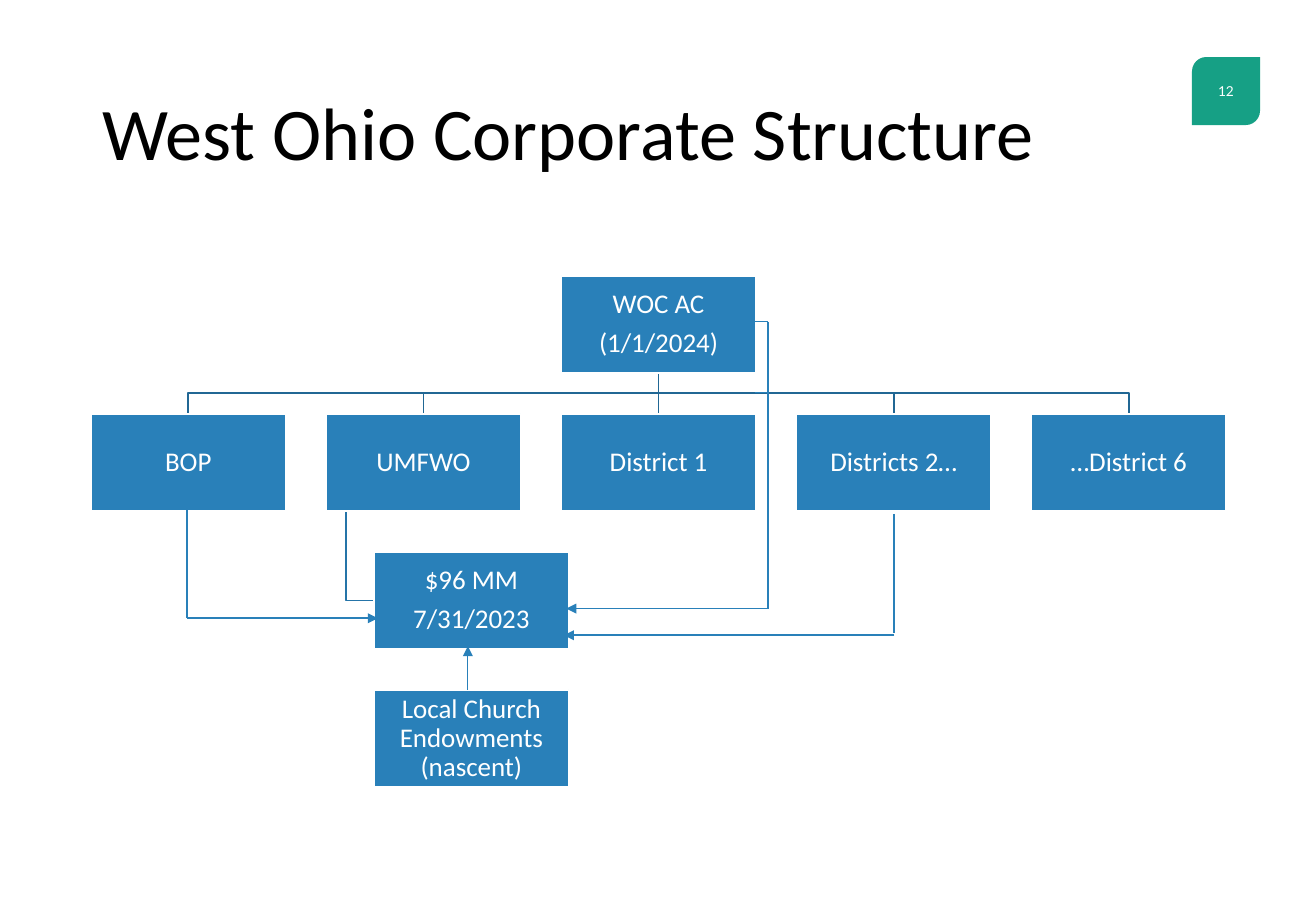
from pptx import Presentation
from pptx.dml.color import RGBColor
from pptx.enum.shapes import MSO_CONNECTOR, MSO_SHAPE
from pptx.enum.text import MSO_ANCHOR, MSO_AUTO_SIZE, PP_ALIGN
from pptx.oxml.ns import qn
from pptx.util import Inches, Pt
from lxml.etree import SubElement

# Content
TITLE = "West Ohio Corporate Structure"
PAGE = "12"
ROOT = ["WOC AC", "(1/1/2024)"]
UNITS = ["BOP", "UMFWO", "District 1", "Districts 2…", "…District 6"]
FUND = ["$96 MM", "7/31/2023"]
LOCAL = ["Local Church Endowments (nascent)"]

BLUE, TREE, BRANCH = "2980B9", "216794", "2574A8"
WHITE, GREEN, BLACK = "FFFFFF", "16A085", "000000"

# Grid: five columns, four rows
WIDE, HIGH = 1.6, 0.8
COLS = [0.75 + i * (8.49 - 0.75) / 4 for i in range(5)]
ROWS = [2.27 + i * (5.68 - 2.27) / 3 for i in range(4)]
FUND_X = 3.08
MID = COLS[2] + WIDE / 2

# Money flows: start, end, width, arrowhead
FLOWS = [
    ((6.21, 3.23), (6.33, 3.23), 0.5, False),
    ((6.32, 2.65), (6.32, 5.01), 1, False),
    ((6.32, 5.01), (4.66, 5.01), 1, True),
    ((1.54, 4.14), (1.54, 5.09), 1, False),
    ((1.54, 5.09), (3.11, 5.09), 1, True),
    ((7.36, 5.23), (4.64, 5.23), 1, True),
    ((7.36, 4.23), (7.36, 5.21), 1, False),
    ((6.21, 2.65), (6.32, 2.65), 0.5, False),
    ((3.85, 5.68), (3.85, 5.32), 0.5, True),
]


def color(code):
    return RGBColor.from_string(code)


def write(frame, lines, size, font, ink, align, space=0.9):
    frame.word_wrap = True
    frame.auto_size = MSO_AUTO_SIZE.NONE
    frame.vertical_anchor = MSO_ANCHOR.MIDDLE
    for i, line in enumerate(lines):
        para = frame.add_paragraph() if i else frame.paragraphs[0]
        para.alignment = align
        para.line_spacing = space
        para.space_before = Pt(5.6 if i else 0)
        run = para.add_run()
        run.text = line
        run.font.size = Pt(size)
        run.font.name = font
        run.font.color.rgb = color(ink)


def stroke(shape, code, width):
    shape.line.color.rgb = color(code)
    shape.line.width = Pt(width)


def add_box(x, y, lines):
    box = shapes.add_shape(MSO_SHAPE.RECTANGLE, Inches(x), Inches(y),
                           Inches(WIDE), Inches(HIGH))
    box.shadow.inherit = False
    box.fill.solid()
    box.fill.fore_color.rgb = color(BLUE)
    stroke(box, WHITE, 1)
    frame = box.text_frame
    frame.margin_left = frame.margin_right = Inches(0.01)
    frame.margin_top = frame.margin_bottom = Inches(0.01)
    write(frame, lines, 16, "Calibri", WHITE, PP_ALIGN.CENTER)


def add_line(start, end, code, width, arrow=False):
    line = shapes.add_connector(MSO_CONNECTOR.STRAIGHT,
                                *[Inches(v) for v in start + end])
    stroke(line, code, width)
    if arrow:
        SubElement(line.line._get_or_add_ln(), qn("a:tailEnd"), type="triangle")
    SubElement(line._element.spPr, qn("a:effectLst"))


def add_bend(points, code):
    spots = [(Inches(x), Inches(y)) for x, y in points]
    path = shapes.build_freeform(*spots[0])
    path.add_line_segments(spots[1:], close=False)
    bend = path.convert_to_shape()
    bend.shadow.inherit = False
    bend.fill.background()
    stroke(bend, code, 1)


deck = Presentation()
deck.slide_width, deck.slide_height = Inches(10.83), Inches(7.5)
slide = deck.slides.add_slide(deck.slide_layouts[5])
shapes = slide.shapes

# Page badge
badge = shapes.add_shape(MSO_SHAPE.ROUND_2_DIAG_RECTANGLE, Inches(9.81),
                         Inches(0.47), Inches(0.56), Inches(0.56))
badge.adjustments[0] = 0.21
badge.shadow.inherit = False
badge.fill.solid()
badge.fill.fore_color.rgb = color(GREEN)
badge.line.fill.background()
write(badge.text_frame, [PAGE], 8.1, "Lato", WHITE, PP_ALIGN.CENTER, 1)

# Title
title = shapes.title
title.left, title.top = Inches(0.74), Inches(0.4)
title.width, title.height = Inches(9.34), Inches(1.45)
write(title.text_frame, [TITLE], 44, "Calibri", BLACK, PP_ALIGN.LEFT)

# Tree lines
foot = ROWS[0] + HIGH
bus = (foot + ROWS[1]) / 2
for x in COLS:
    mid = x + WIDE / 2
    if x == COLS[2]:
        add_line((MID, foot), (MID, ROWS[1]), TREE, 1)
    else:
        add_bend([(MID, foot), (MID, bus), (mid, bus), (mid, ROWS[1])], TREE)
stem, level = COLS[1] + WIDE / 10, ROWS[2] + HIGH / 2
add_bend([(stem, ROWS[1] + HIGH), (stem, level), (FUND_X, level)], BRANCH)

# Boxes
add_box(COLS[2], ROWS[0], ROOT)
for x, unit in zip(COLS, UNITS):
    add_box(x, ROWS[1], [unit])
add_box(FUND_X, ROWS[2], FUND)
add_box(FUND_X, ROWS[3], LOCAL)

# Money flows
for start, end, width, arrow in FLOWS:
    add_line(start, end, BLUE, width, arrow)

deck.save("out.pptx")
